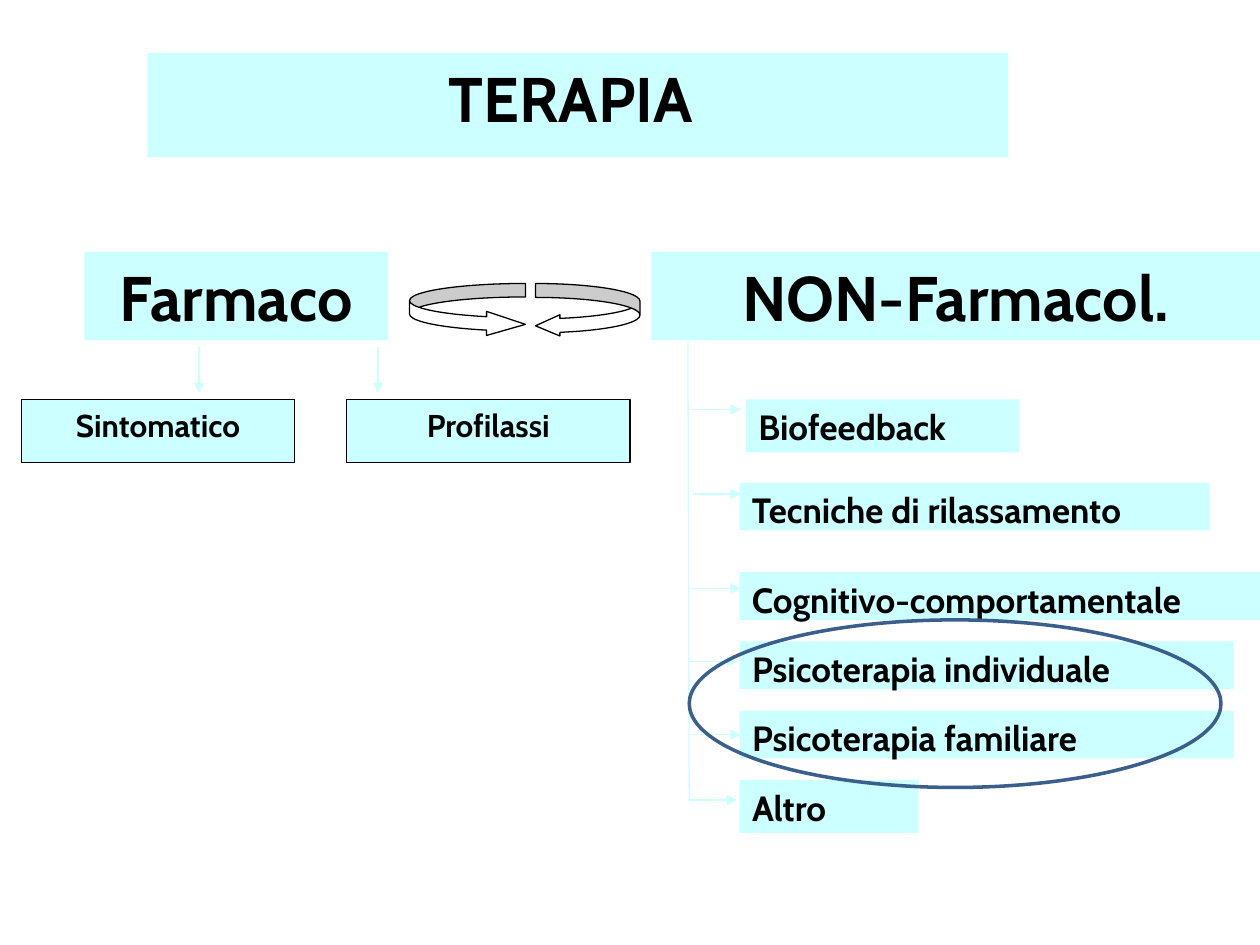
import pptx
import pptx.util
import pptx.dml.color
import pptx.enum.shapes
import pptx.enum.text
import pptx.oxml
import pptx.oxml.ns

Inches = pptx.util.Inches
Pt = pptx.util.Pt
SHAPE = pptx.enum.shapes.MSO_SHAPE
ALIGN = pptx.enum.text.PP_ALIGN

COLORS = {"panel": "CCFFFF", "ink": "000000", "paper": "FFFFFF", "ring": "3A5F8C"}
FONT = "Cabin"


def color(name):
    return pptx.dml.color.RGBColor.from_string(COLORS[name])


def paint(shape, fill=None, line=None, width=0.75):
    if fill:
        shape.fill.solid()
        shape.fill.fore_color.rgb = color(fill)
    else:
        shape.fill.background()
    if line:
        shape.line.color.rgb = color(line)
        shape.line.width = Pt(width)
    else:
        shape.line.fill.background()


def add_figure(page, kind, area, fill=None, line=None, width=0.75):
    shape = page.shapes.add_shape(kind, *map(Inches, area))
    shape.shadow.inherit = False
    paint(shape, fill, line, width)
    return shape


def write(shape, text, size, align):
    frame = shape.text_frame
    frame.word_wrap = True
    frame.auto_size = pptx.enum.text.MSO_AUTO_SIZE.NONE
    frame.vertical_anchor = pptx.enum.text.MSO_ANCHOR.TOP
    para = frame.paragraphs[0]
    para.text = text
    para.alignment = align
    para.font.name = FONT
    para.font.size = Pt(size)
    para.font.bold = True
    para.font.color.rgb = color("ink")


def add_label(page, area, text, size, align=ALIGN.CENTER, line=None):
    box = add_figure(page, SHAPE.RECTANGLE, area, "panel", line)
    write(box, text, size, align)


def add_line(page, start, end, arrow=True):
    line = page.shapes.add_connector(
        pptx.enum.shapes.MSO_CONNECTOR.STRAIGHT, *map(Inches, start + end))
    line.line.color.rgb = color("panel")
    line.line.width = Pt(0.75)
    if arrow:
        tail = pptx.oxml.parse_xml(
            f'<a:tailEnd {pptx.oxml.ns.nsdecls("a")} type="triangle"/>')
        line.line._get_or_add_ln().append(tail)
    effects = pptx.oxml.parse_xml(f'<a:effectLst {pptx.oxml.ns.nsdecls("a")}/>')
    line._element.spPr.append(effects)


def add_title(page, area):
    title = page.shapes.title
    title.left, title.top, title.width, title.height = map(Inches, area)
    paint(title, "panel")
    write(title, "TERAPIA ", 36, ALIGN.CENTER)


def add_drug_branch(page, area):
    left, top, width, height = area
    add_label(page, area, "Farmaco", 36)
    branches = [("Sintomatico", -0.5, 2.17, 0.91), ("Profilassi", 2.08, 2.25, 2.33)]
    for text, offset, box_width, arrow_offset in branches:
        add_label(page, (left + offset, top + 1.17, box_width, 0.5), text, 18, line="ink")
        x = left + arrow_offset
        add_line(page, (x, top + height + 0.05), (x, top + height + 0.42))


def add_cycle(page, area):
    left, top, width, height = area
    arrows = [
        (SHAPE.CURVED_RIGHT_ARROW, 0, 0.92, (0.254, 0.454, 0.733)),
        (SHAPE.CURVED_LEFT_ARROW, width - 0.83, 0.83, (0.263, 0.4, 0.462)),
    ]
    for kind, offset, arrow_width, values in arrows:
        arrow = add_figure(page, kind, (left + offset, top, arrow_width, height), "paper", "ink")
        for index, value in enumerate(values):
            arrow.adjustments[index] = value


def add_other_branch(page, area):
    left, top, width, height = area
    add_label(page, area, "NON-Farmacol.", 36)
    trunk = left + 0.3
    add_line(page, (trunk - 0.01, top + height + 0.01), (trunk, top + 4.35), arrow=False)

    therapies = [
        ("Biofeedback", 0.75, 1.17, 2.17, 0.42, 0.33, 1.25),
        ("Tecniche di rilassamento", 0.7, 1.83, 3.73, 0.38, 0.33, 1.92),
        ("Cognitivo-comportamentale", 0.7, 2.54, 4.13, 0.38, 0.33, 2.67),
        ("Psicoterapia individuale", 0.7, 3.09, 3.92, 0.38, 0.3, 3.25),
        ("Psicoterapia familiare", 0.7, 3.64, 3.92, 0.38, 0.33, 3.83),
        ("Altro", 0.7, 4.19, 1.42, 0.42, 0.3, 4.35),
    ]
    for text, x, y, box_width, box_height, arrow_x, arrow_y in therapies:
        start = (left + arrow_x, top + arrow_y)
        add_line(page, start, (start[0] + 0.38, start[1]))
        add_label(page, (left + x, top + y, box_width, box_height), text, 20, ALIGN.LEFT)
    add_figure(page, SHAPE.OVAL, (trunk, top + 2.92, 4.22, 1.33), line="ring", width=2)


def main():
    deck = pptx.Presentation()
    deck.slide_width, deck.slide_height = Inches(10), Inches(7.5)
    page = deck.slides.add_slide(deck.slide_layouts[5])
    add_title(page, (1.17, 0.42, 6.83, 0.83))
    add_drug_branch(page, (0.67, 2, 2.41, 0.7))
    add_cycle(page, (3.25, 2.25, 1.83, 0.42))
    add_other_branch(page, (5.17, 2, 4.83, 0.7))
    deck.save("out.pptx")


if __name__ == "__main__":
    main()
